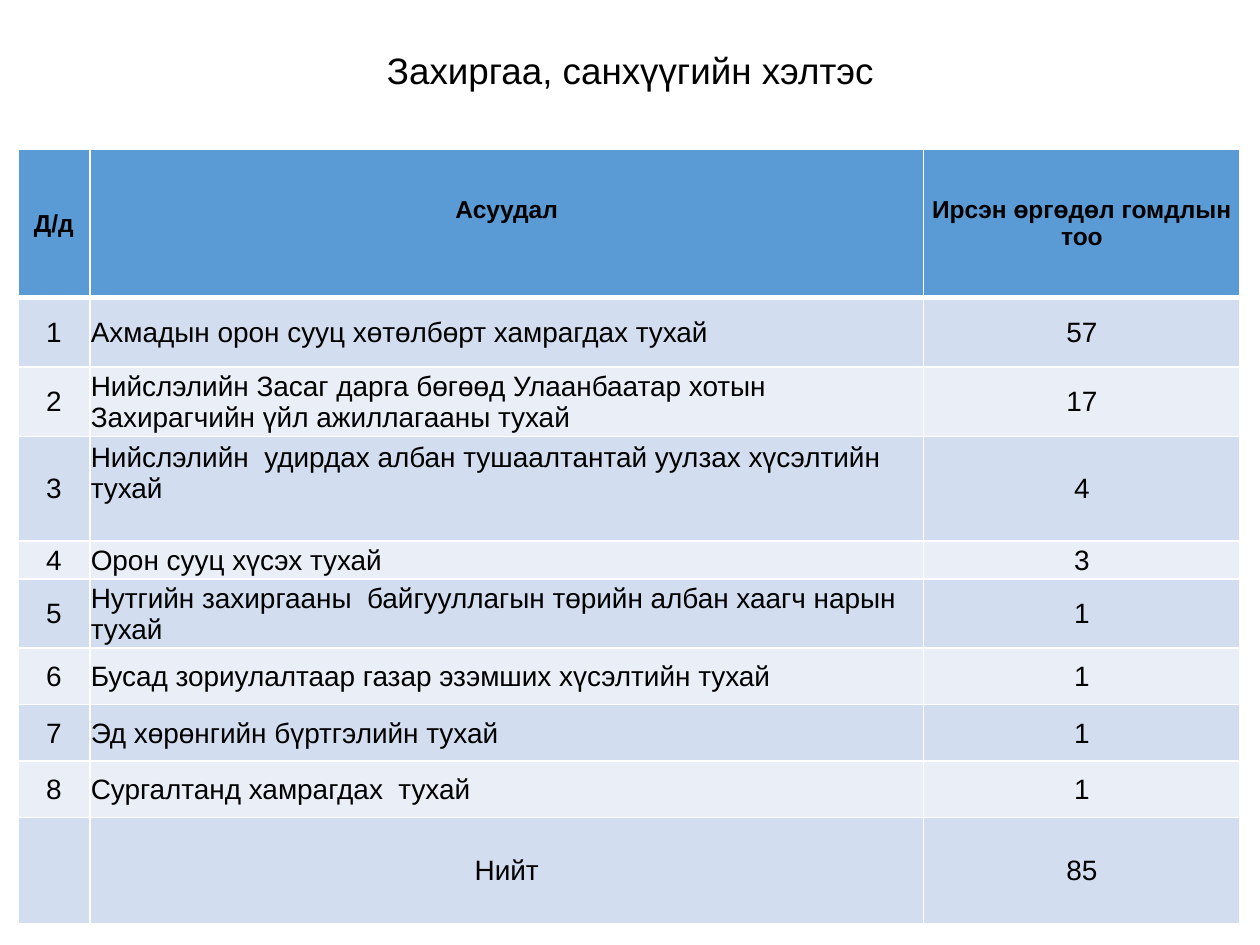
import lxml.etree
import pptx
import pptx.dml.color
import pptx.enum.text
import pptx.oxml.ns
import pptx.util

Cm = pptx.util.Cm
Pt = pptx.util.Pt
ALIGN = pptx.enum.text.PP_ALIGN
MIDDLE = pptx.enum.text.MSO_ANCHOR.MIDDLE

COLORS = {
    "text": "000000",
    "header": "5B9BD5",
    "odd": "D2DEEF",
    "even": "EAEFF7",
    "border": "FFFFFF",
}
HEADERS = ["Д/д", "Асуудал", "Ирсэн өргөдөл гомдлын тоо"]
ISSUES = [
    ("Ахмадын орон сууц хөтөлбөрт хамрагдах тухай", 57),
    ("Нийслэлийн Засаг дарга бөгөөд Улаанбаатар хотын Захирагчийн үйл ажиллагааны тухай", 17),
    ("Нийслэлийн  удирдах албан тушаалтантай уулзах хүсэлтийн тухай", 4),
    ("Орон сууц хүсэх тухай", 3),
    ("Нутгийн захиргааны  байгууллагын төрийн албан хаагч нарын тухай", 1),
    ("Бусад зориулалтаар газар эзэмших хүсэлтийн тухай", 1),
    ("Эд хөрөнгийн бүртгэлийн тухай", 1),
    ("Сургалтанд хамрагдах  тухай", 1),
]
COLUMN_WIDTHS = [1.45, 16.81, 6.38]
ROW_HEIGHTS = [3, 1.4, 1.4, 2.11, 0.76, 1.4, 1.14, 1.14, 1.14, 2.13]
# Cells whose text sits above the middle, by (row, column)
RAISED_MARGINS = {(0, 1): 0.54, (3, 1): 0.65}


def write_text(para, text, size, bold=False, align=ALIGN.CENTER):
    para.alignment = align
    span = para.add_run()
    span.text = text
    font_format = {"name": "Arial", "size": Pt(size), "bold": bold}
    for name, value in font_format.items():
        setattr(span.font, name, value)
    span.font.color.rgb = pptx.dml.color.RGBColor.from_string(COLORS["text"])


def set_borders(cell, widths):
    """Draw left, right, top and bottom borders, with widths in points."""
    properties = cell._tc.get_or_add_tcPr()
    for index, (side, width) in enumerate(zip("LRTB", widths)):
        line = lxml.etree.Element(pptx.oxml.ns.qn(f"a:ln{side}"), w=str(Pt(width)))
        fill = lxml.etree.SubElement(line, pptx.oxml.ns.qn("a:solidFill"))
        lxml.etree.SubElement(fill, pptx.oxml.ns.qn("a:srgbClr"), val=COLORS["border"])
        properties.insert(index, line)


deck = pptx.Presentation()
deck.slide_width = Cm(25.4)
deck.slide_height = Cm(19.05)
page = deck.slides.add_slide(deck.slide_layouts[5])

# Title
title = page.shapes.title
title_place = {"left": Cm(0.36), "top": Cm(0.48), "width": Cm(24.31), "height": Cm(1.98)}
for name, value in title_place.items():
    setattr(title, name, value)
title_format = {"vertical_anchor": MIDDLE, "margin_left": Cm(0.64), "word_wrap": True}
for name, value in title_format.items():
    setattr(title.text_frame, name, value)
title_para = title.text_frame.paragraphs[0]
title_para.line_spacing = 0.9
write_text(title_para, "Захиргаа, санхүүгийн хэлтэс", 21)

# Table of issues
rows = [HEADERS]
rows += [(number, issue, count) for number, (issue, count) in enumerate(ISSUES, 1)]
rows.append(("", "Нийт", sum(count for _, count in ISSUES)))
last_row = len(rows) - 1

table = page.shapes.add_table(
    len(rows), len(HEADERS), Cm(0.36), Cm(3), Cm(sum(COLUMN_WIDTHS)), Cm(sum(ROW_HEIGHTS))
).table
for column, width in zip(table.columns, COLUMN_WIDTHS):
    column.width = Cm(width)

for row_index, (values, height) in enumerate(zip(rows, ROW_HEIGHTS)):
    table.rows[row_index].height = Cm(height)
    is_header = row_index == 0
    band = "header" if is_header else "odd" if row_index % 2 else "even"
    for column_index, value in enumerate(values):
        cell = table.cell(row_index, column_index)
        cell_format = {
            "vertical_anchor": MIDDLE,
            "margin_left": Cm(0.02),
            "margin_right": Cm(0.02),
            "margin_top": Cm(0.02),
            "margin_bottom": Cm(RAISED_MARGINS.get((row_index, column_index), 0)),
        }
        for name, setting in cell_format.items():
            setattr(cell, name, setting)
        cell.fill.solid()
        cell.fill.fore_color.rgb = pptx.dml.color.RGBColor.from_string(COLORS[band])
        set_borders(cell, [1, 1, 3 if row_index == 1 else 1, 3 if is_header else 1])
        if value != "":
            is_issue = column_index == 1 and 0 < row_index < last_row
            write_text(
                cell.text_frame.paragraphs[0],
                str(value),
                14 if is_header else 16,
                bold=is_header,
                align=ALIGN.LEFT if is_issue else ALIGN.CENTER,
            )

deck.save("out.pptx")
